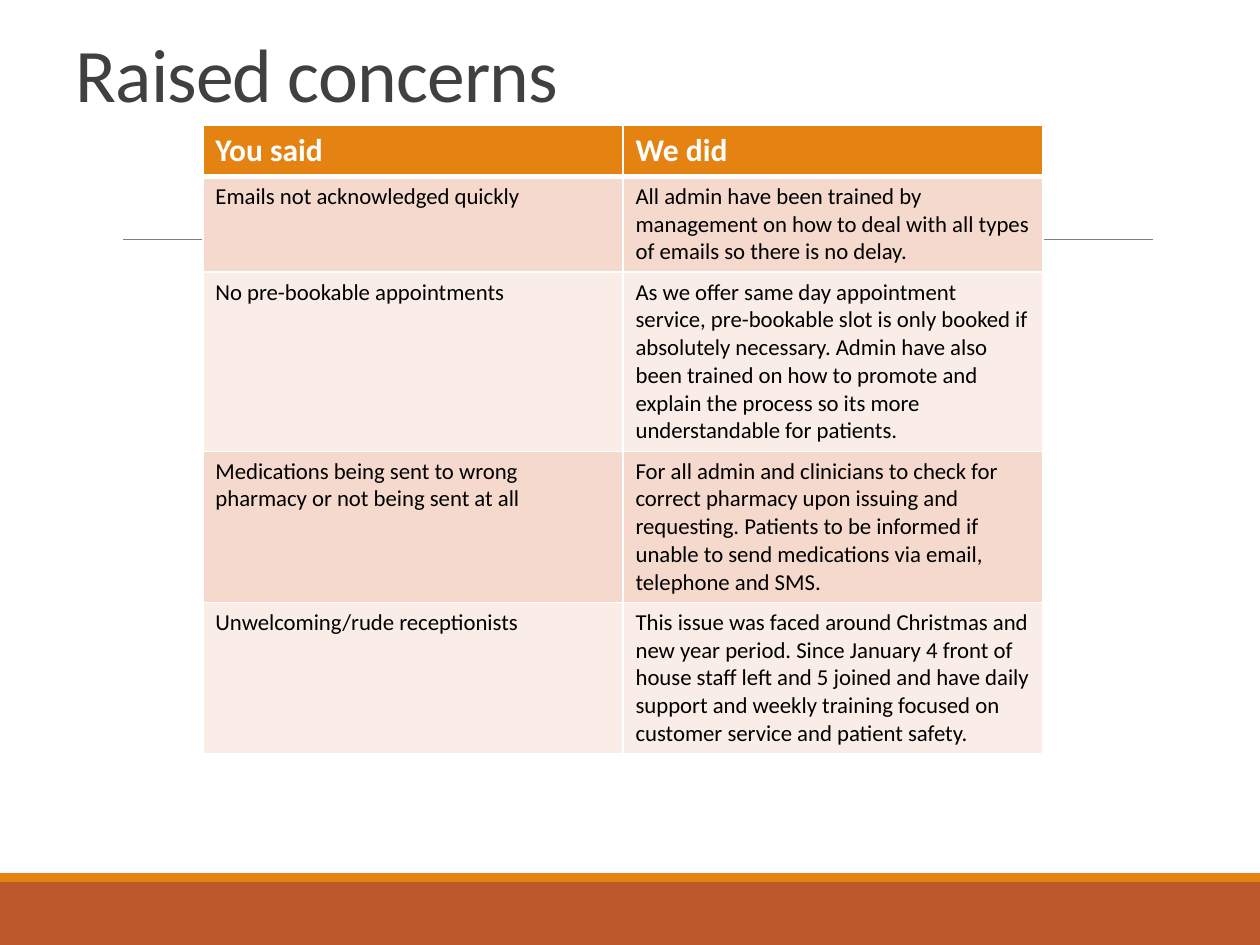
from typing import NamedTuple

from lxml import etree
from pptx import Presentation
from pptx import util as u
from pptx.dml.color import RGBColor
from pptx.enum import shapes, text
from pptx.oxml import ns

FONT = "Calibri"
WHITE = "FFFFFF"
ORANGE = "E48312"
RUST = "BD582C"
BAND_FILLS = ("F5D9CC", "FAEDE7")


class Band(NamedTuple):
    top: float
    height: float
    color: str


class Row(NamedTuple):
    said: str
    did: str
    height: float


BANDS = (Band(7, 0.5, RUST), Band(6.93, 0.07, ORANGE))
HEADER = Row("You said", "We did", 0.41)
CONCERNS = (
    Row("Emails not acknowledged quickly",
        "All admin have been trained by management on how to deal with all "
        "types of emails so there is no delay.", 0.75),
    Row("No pre-bookable appointments",
        "As we offer same day appointment service, pre-bookable slot is only "
        "booked if absolutely necessary. Admin have also been trained on how "
        "to promote and explain the process so its more understandable for "
        "patients.", 1.42),
    Row("Medications being sent to wrong pharmacy or not being sent at all",
        "For all admin and clinicians to check for correct pharmacy upon "
        "issuing and requesting. Patients to be informed if unable to send "
        "medications via email, telephone and SMS.", 1.2),
    Row("Unwelcoming/rude receptionists",
        "This issue was faced around Christmas and new year period. Since "
        "January 4 front of house staff left and 5 joined and have daily "
        "support and weekly training focused on customer service and patient "
        "safety.", 1.2),
)


def rgb(value: str) -> RGBColor:
    return RGBColor.from_string(value)


def set_font(p, size: float, color: str, bold: bool = False) -> None:
    p.font.name = FONT
    p.font.size = u.Pt(size)
    p.font.bold = bold
    p.font.color.rgb = rgb(color)


def add_band(s, band: Band) -> None:
    sp = s.shapes.add_shape(shapes.MSO_SHAPE.RECTANGLE, 0, u.Inches(band.top),
                            u.Inches(10), u.Inches(band.height))
    sp.shadow.inherit = False
    sp.fill.solid()
    sp.fill.fore_color.rgb = rgb(band.color)
    sp.line.fill.background()


def add_rule(s) -> None:
    line = s.shapes.add_connector(shapes.MSO_CONNECTOR.STRAIGHT, u.Inches(0.98),
                                  u.Inches(1.9), u.Inches(9.15), u.Inches(1.9))
    line.line.color.rgb = rgb("808080")
    line.line.width = u.Pt(0.5)
    etree.SubElement(line._element.spPr, ns.qn("a:effectLst"))


def set_title(s, title: str) -> None:
    sp = s.shapes.title
    sp.left, sp.top = u.Inches(0.5), u.Inches(0.3)
    sp.width, sp.height = u.Inches(8.17), u.Inches(0.69)
    tf = sp.text_frame
    tf.text = title
    tf.auto_size = text.MSO_AUTO_SIZE.NONE
    tf.vertical_anchor = text.MSO_ANCHOR.BOTTOM
    p = tf.paragraphs[0]
    p.alignment = text.PP_ALIGN.LEFT
    p.line_spacing = 0.85
    set_font(p, 43.2, "404040")
    p.runs[0].font._element.set("spc", "-50")


def set_borders(cell, bottom: float) -> None:
    tc_pr = cell._tc.get_or_add_tcPr()
    widths = {"lnL": 1, "lnR": 1, "lnT": 1, "lnB": bottom}
    for position, (side, width) in enumerate(widths.items()):
        ln = etree.Element(ns.qn(f"a:{side}"), w=str(u.Pt(width)))
        fill = etree.SubElement(ln, ns.qn("a:solidFill"))
        etree.SubElement(fill, ns.qn("a:srgbClr"), val=WHITE)
        tc_pr.insert(position, ln)


def add_table(s, rows: tuple[Row, ...]) -> None:
    height = sum(row.height for row in rows)
    table = s.shapes.add_table(len(rows), 2, u.Inches(1.61), u.Inches(0.99),
                               u.Inches(6.67), u.Inches(height)).table
    for i, row in enumerate(rows):
        table.rows[i].height = u.Inches(row.height)
        header = i == 0
        for cell, words in zip(table.rows[i].cells, (row.said, row.did)):
            cell.text = words
            cell.fill.solid()
            cell.fill.fore_color.rgb = rgb(ORANGE if header else BAND_FILLS[(i - 1) % 2])
            set_borders(cell, 3 if header else 1)
            set_font(cell.text_frame.paragraphs[0], 18 if header else 13,
                     WHITE if header else "000000", header)


def main() -> None:
    prs = Presentation()
    prs.slide_width, prs.slide_height = u.Inches(10), u.Inches(7.5)
    s = prs.slides.add_slide(prs.slide_layouts[5])
    for band in BANDS:
        add_band(s, band)
    add_rule(s)
    set_title(s, "Raised concerns")
    add_table(s, (HEADER, *CONCERNS))
    prs.save("out.pptx")


if __name__ == "__main__":
    main()
